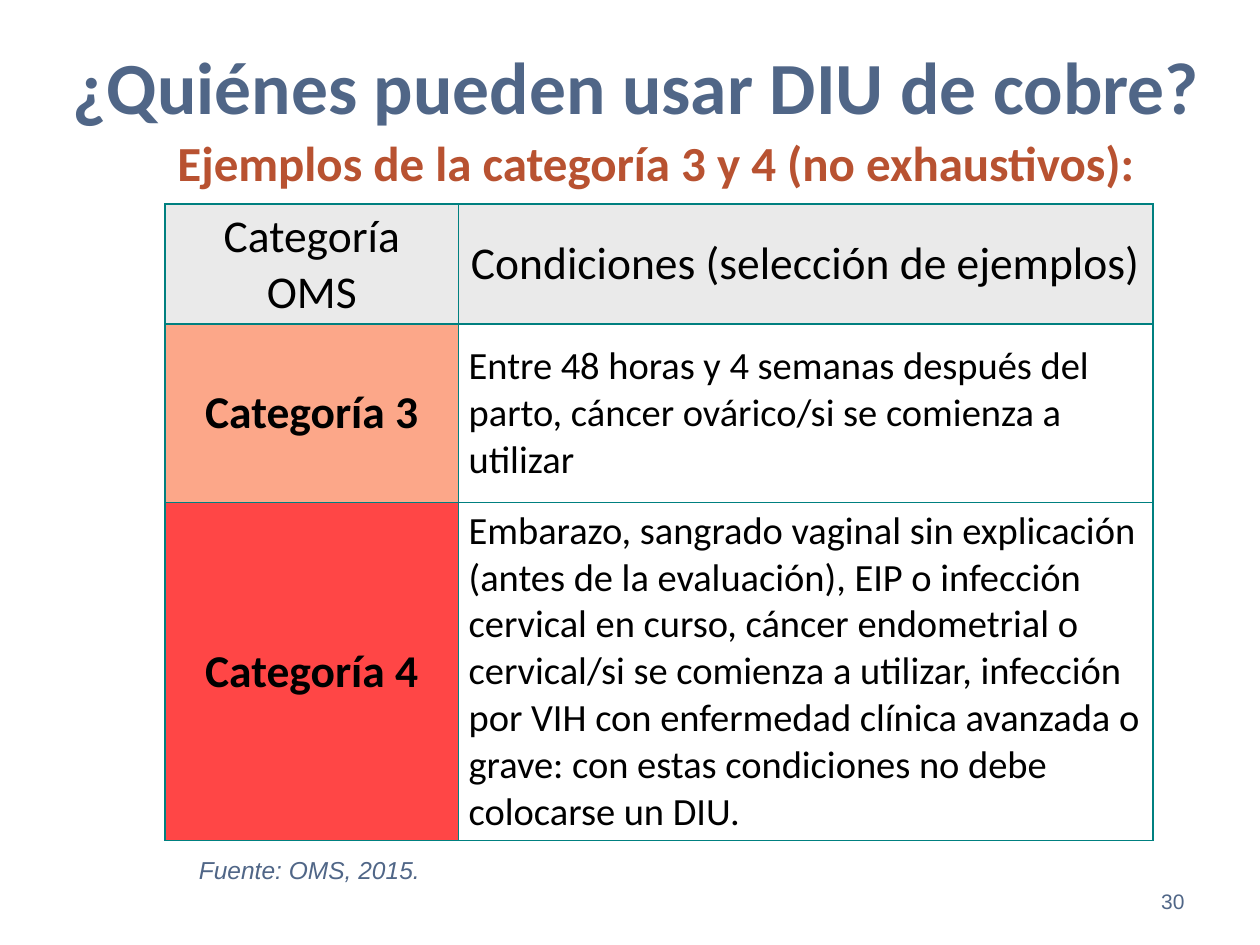
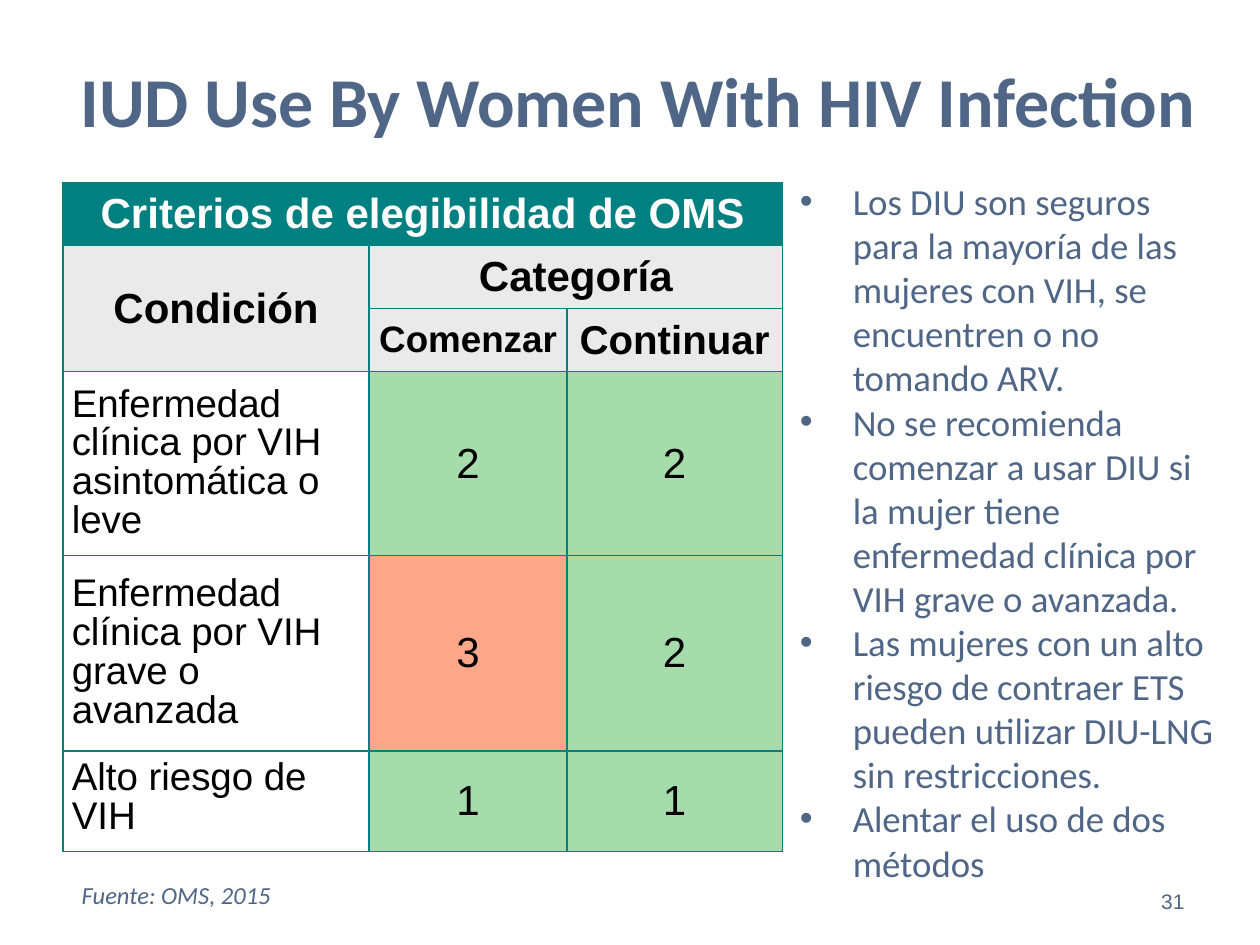
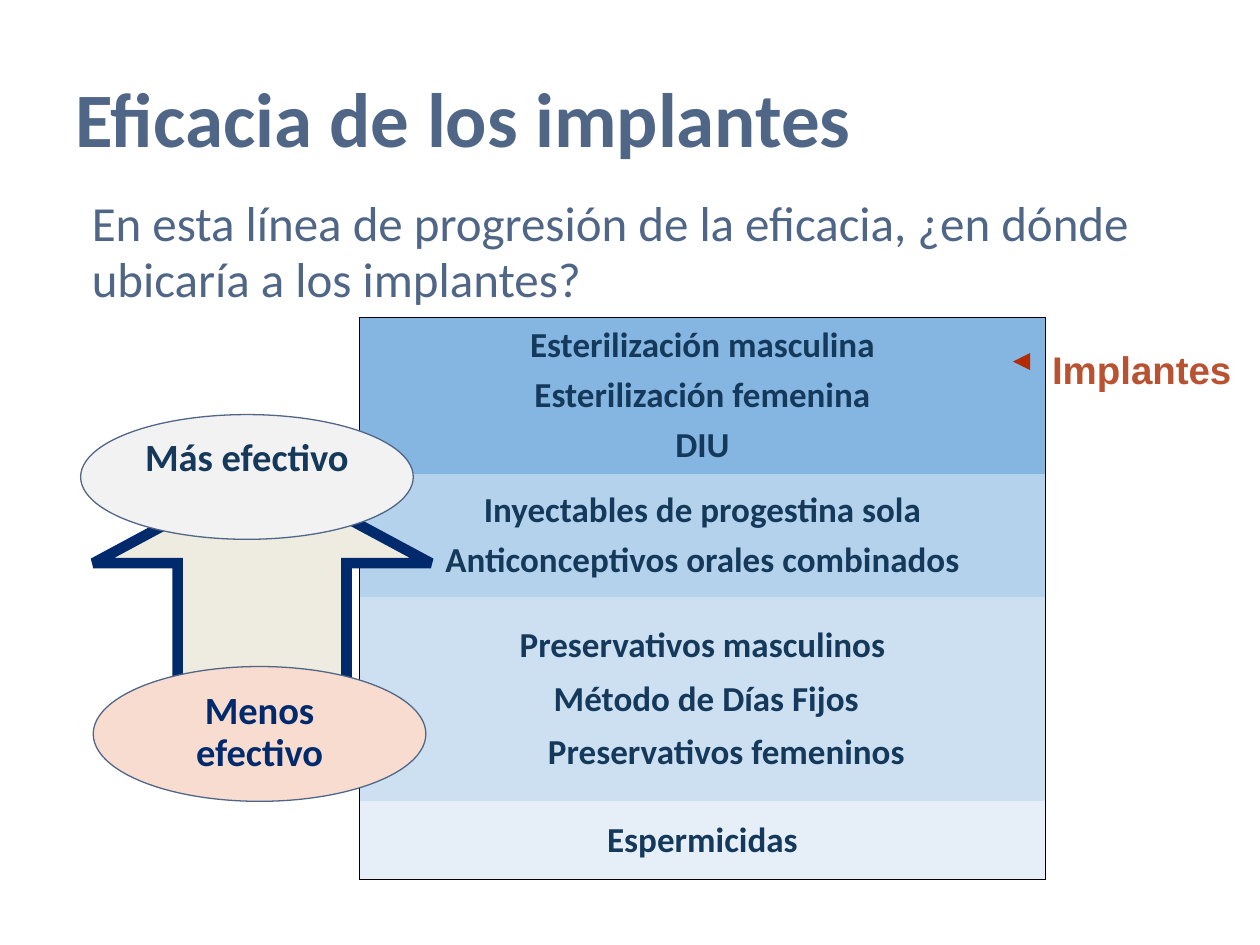
"""Build three slides on copper IUD eligibility and implant effectiveness."""

from dataclasses import dataclass
from typing import Any

import lxml.etree
import pptx
import pptx.dml.color
import pptx.enum.shapes
import pptx.enum.text
import pptx.oxml
import pptx.oxml.ns
import pptx.util

Inches = pptx.util.Inches
Pt = pptx.util.Pt
ALIGN = pptx.enum.text.PP_ALIGN
ANCHOR = pptx.enum.text.MSO_ANCHOR
SHAPE = pptx.enum.shapes.MSO_SHAPE
qn = pptx.oxml.ns.qn

COLORS = {
    "slate": "506687", "rust": "B85231", "teal": "008080", "black": "000000",
    "white": "FFFFFF", "header": "EAEAEA", "salmon": "FCA789", "red": "FF4646",
    "green": "A6DBAB", "ink": "15395B", "navy": "002A6C", "cream": "EEECE1",
    "pale": "F2F2F2", "peach": "F8DCD0", "marker": "B42B00",
    "blue_1": "85B5E1", "blue_2": "B5D2EC", "blue_3": "CDE0F2", "blue_4": "E6EFF8",
}
NO_STYLE_TABLE = "{2D5ABB26-0587-4C30-8999-92F81FD0307C}"
SIDES = {"left": "lnL", "right": "lnR", "top": "lnT", "bottom": "lnB"}
Insets = tuple[float, float, float, float]
BOX_INSETS = (0.1, 0.05, 0.1, 0.05)


@dataclass(frozen=True)
class Box:
    """Position and size in inches."""

    left: float
    top: float
    width: float
    height: float

    def emu(self) -> tuple[int, int, int, int]:
        """Return the four lengths for python-pptx."""
        return Inches(self.left), Inches(self.top), Inches(self.width), Inches(self.height)


@dataclass(frozen=True)
class CellSpec:
    """Text, fill and format of one table cell."""

    text: str
    format: dict[str, Any]
    fill: str | None = None
    insets: Insets = BOX_INSETS
    anchor: Any = ANCHOR.MIDDLE
    rows: int = 1
    columns: int = 1


@dataclass(frozen=True)
class Oval:
    """A labelled end of the effectiveness arrow."""

    box: Box
    text: str
    fill: str
    color: str


def rgb(name: str) -> pptx.dml.color.RGBColor:
    """Return a named colour."""
    return pptx.dml.color.RGBColor.from_string(COLORS[name])


def write(
    text_frame: Any, text: str, *, size: float, color: str, font: str = "Calibri",
    bold: bool = False, italic: bool = False, align: Any = ALIGN.LEFT,
    spacing: float = 1.0, gap: float = 0, bullet: str = "", indents: tuple[float, ...] = (),
) -> None:
    """Write one paragraph per line of text in a single format."""
    for index, line in enumerate(text.split("\n")):
        paragraph = text_frame.add_paragraph() if index else text_frame.paragraphs[0]
        paragraph.text = line
        paragraph.alignment = align
        paragraph.line_spacing = spacing
        if index and gap:
            paragraph.space_before = Pt(gap)
        properties = paragraph._p.get_or_add_pPr()
        if indents:
            properties.set("marL", str(Inches(indents[index])))
        if bullet:
            properties.set("marL", str(Inches(0.5)))
            properties.set("indent", str(Inches(-0.42)))
            lxml.etree.SubElement(properties, qn("a:buFont"), typeface="Arial")
            lxml.etree.SubElement(properties, qn("a:buChar"), char=bullet)
        for run in paragraph.runs:
            run.font.name = font
            run.font.size = Pt(size)
            run.font.bold = bold
            run.font.italic = italic
            run.font.color.rgb = rgb(color)


def fit(holder: Any, insets: Insets, anchor: Any) -> None:
    """Set the margins and anchor of a text frame or cell."""
    holder.margin_left, holder.margin_top, holder.margin_right, holder.margin_bottom = map(
        Inches, insets
    )
    holder.vertical_anchor = anchor


def add_text(
    slide: Any, box: Box, text: str, anchor: Any = ANCHOR.TOP,
    insets: Insets = BOX_INSETS, **text_format: Any,
) -> None:
    """Add a wrapped text box."""
    text_frame = slide.shapes.add_textbox(*box.emu()).text_frame
    text_frame.word_wrap = True
    fit(text_frame, insets, anchor)
    write(text_frame, text, **text_format)


def add_title(slide: Any, box: Box, text: str, size: float, align: Any = ALIGN.LEFT) -> None:
    """Add the slide title."""
    add_text(slide, box, text, ANCHOR.MIDDLE, size=size, color="slate", bold=True, align=align)


def add_source(slide: Any, box: Box, text: str, font: str, spacing: float) -> None:
    """Add the italic source line."""
    add_text(slide, box, text, size=14, color="slate", font=font, italic=True, spacing=spacing)


def add_number(slide: Any, number: int) -> None:
    """Add the slide number at the lower right."""
    add_text(slide, Box(7.17, 6.95, 2.33, 0.4), str(number), ANCHOR.MIDDLE,
             size=12, color="slate", font="Arial", align=ALIGN.RIGHT)


def set_borders(cell: Any, sides: list[str], color: str, width: float) -> None:
    """Draw the given sides of a cell."""
    properties = cell._tc.get_or_add_tcPr()
    for position, side in enumerate(side for side in SIDES if side in sides):
        line = pptx.oxml.parse_xml(
            f'<a:{SIDES[side]} xmlns:a="http://schemas.openxmlformats.org/drawingml/2006/main"'
            f' w="{Pt(width)}"><a:solidFill><a:srgbClr val="{COLORS[color]}"/></a:solidFill>'
            f"</a:{SIDES[side]}>"
        )
        properties.insert(position, line)


def add_table(
    slide: Any, left: float, top: float, widths: list[float], heights: list[float],
    cells: dict[tuple[int, int], CellSpec], border: str, border_width: float,
    inner_lines: bool = True,
) -> None:
    """Add a table with explicit fills and borders."""
    box = Box(left, top, sum(widths), sum(heights))
    table = slide.shapes.add_table(len(heights), len(widths), *box.emu()).table
    table._tbl.tblPr.find(qn("a:tableStyleId")).text = NO_STYLE_TABLE
    for column, width in zip(table.columns, widths):
        column.width = Inches(width)
    for row, height in zip(table.rows, heights):
        row.height = Inches(height)
    for (row, column), spec in cells.items():
        cell = table.cell(row, column)
        if spec.rows > 1 or spec.columns > 1:
            cell.merge(table.cell(row + spec.rows - 1, column + spec.columns - 1))
        fit(cell, spec.insets, spec.anchor)
        write(cell.text_frame, spec.text, **spec.format)
        if spec.fill:
            cell.fill.solid()
            cell.fill.fore_color.rgb = rgb(spec.fill)
    for row in range(len(heights)):
        sides = ["left", "right"]
        if inner_lines or row == 0:
            sides.append("top")
        if inner_lines or row == len(heights) - 1:
            sides.append("bottom")
        for column in range(len(widths)):
            set_borders(table.cell(row, column), sides, border, border_width)


def add_filled(slide: Any, kind: Any, box: Box, fill: str, line: str, width: float) -> Any:
    """Add a preset shape without shadow."""
    shape = slide.shapes.add_shape(kind, *box.emu())
    shape.shadow.inherit = False
    shape.fill.solid()
    shape.fill.fore_color.rgb = rgb(fill)
    shape.line.color.rgb = rgb(line)
    shape.line.width = Pt(width)
    return shape


def build_copper_slide(slide: Any) -> None:
    """Build the slide on categories 3 and 4 for copper IUDs."""
    add_title(slide, Box(0.3, 0.05, 9.5, 1.25), "¿Quiénes pueden usar DIU de cobre?", 42, ALIGN.CENTER)
    add_text(slide, Box(1.31, 0.92, 8.41, 0.77), "Ejemplos de la categoría 3 y 4 (no exhaustivos):",
             ANCHOR.MIDDLE, size=28, color="rust", bold=True, spacing=0.95)
    header = dict(size=26, color="black", align=ALIGN.CENTER)
    category = header | dict(bold=True)
    condition = dict(size=22, color="black")
    rows = [
        ("Categoría OMS", header, "header", "Condiciones (selección de ejemplos)", header, "header"),
        ("Categoría 3", category, "salmon",
         "Entre 48 horas y 4 semanas después del parto, cáncer ovárico/si se comienza a utilizar",
         condition, None),
        ("Categoría 4", category, "red",
         "Embarazo, sangrado vaginal sin explicación (antes de la evaluación), EIP o infección "
         "cervical en curso, cáncer endometrial o cervical/si se comienza a utilizar, infección "
         "por VIH con enfermedad clínica avanzada o grave: con estas condiciones no debe "
         "colocarse un DIU.", condition, None),
    ]
    insets = (0.08, 0.04, 0.08, 0.04)
    cells = {}
    for row, values in enumerate(rows):
        for column in range(2):
            cells[row, column] = CellSpec(*values[column * 3:column * 3 + 3], insets)
    add_table(slide, 1.31, 1.62, [2.33, 5.51], [0.95, 1.42, 2.68], cells, "teal", 1)
    add_source(slide, Box(1.48, 6.76, 2.1, 0.3), "Fuente: OMS, 2015.", "Arial", 0.9)
    add_number(slide, 30)


def build_hiv_slide(slide: Any) -> None:
    """Build the slide on IUD use with HIV."""
    add_title(slide, Box(0.54, 0.32, 9.19, 0.94), "IUD Use By Women With HIV Infection", 40)
    points = [
        "Los DIU son seguros para la mayoría de las mujeres con VIH, se encuentren o no tomando ARV.",
        "No se recomienda comenzar a usar DIU si la mujer tiene enfermedad clínica por VIH grave o avanzada.",
        "Las mujeres con un alto riesgo de contraer ETS pueden utilizar DIU-LNG sin restricciones.",
        "Alentar el uso de dos métodos",
    ]
    add_text(slide, Box(6.17, 1.37, 3.56, 5.97), "\n".join(points), size=21, color="slate", bullet="•")
    number = dict(size=24, color="black", font="Arial", align=ALIGN.CENTER)
    header = number | dict(bold=True)
    condition = dict(size=22, color="black", font="Arial", spacing=0.9)
    head_insets = (0.07, 0.04, 0.07, 0.04)
    body_insets = (0.07, 0.07, 0.07, 0.07)
    cells = {
        (0, 0): CellSpec("Criterios de elegibilidad de OMS", header | dict(color="white"), "teal",
                         head_insets, columns=3),
        (1, 0): CellSpec("Condición", header, "header", head_insets, rows=2),
        (1, 1): CellSpec("Categoría", header, "header", head_insets, columns=2),
        (2, 1): CellSpec("Comenzar", header | dict(size=21), "header", head_insets),
        (2, 2): CellSpec("Continuar", header | dict(size=23), "header", head_insets),
    }
    criteria = [
        ("Enfermedad clínica por VIH asintomática o leve", 2, 2, ANCHOR.MIDDLE),
        ("Enfermedad clínica por VIH grave o avanzada", 3, 2, ANCHOR.MIDDLE),
        ("Alto riesgo de VIH", 1, 1, ANCHOR.TOP),
    ]
    for row, (name, start, keep, anchor) in enumerate(criteria, start=3):
        cells[row, 0] = CellSpec(name, condition, None, body_insets, anchor)
        for column, value in enumerate((start, keep), start=1):
            fill = "salmon" if value >= 3 else "green"
            cells[row, column] = CellSpec(str(value), number, fill, body_insets)
    add_table(slide, 0.5, 1.45, [2.43, 1.57, 1.71], [0.5, 0.5, 0.5, 1.4, 1.55, 0.8], cells, "teal", 1)
    add_source(slide, Box(0.55, 6.98, 6.38, 0.28), "Fuente: OMS, 2015", "Calibri", 0.8)
    add_number(slide, 31)


def build_implant_slide(slide: Any) -> None:
    """Build the slide on implant effectiveness."""
    add_title(slide, Box(0.5, 0.3, 9, 1.25), "Eficacia de los implantes", 44)
    add_text(slide, Box(0.63, 1.51, 8.92, 0.99),
             "En esta línea de progresión de la eficacia, ¿en dónde ubicaría a los implantes?",
             size=28, color="slate", spacing=0.95)
    method = dict(size=20, color="ink", bold=True, align=ALIGN.CENTER, gap=4)
    tiers = [
        ("Esterilización masculina\nEsterilización femenina\nDIU", method),
        ("Inyectables de progestina sola\nAnticonceptivos orales combinados", method),
        ("Preservativos masculinos\nMétodo de Días Fijos\nPreservativos femeninos",
         method | dict(gap=6, indents=(0, 0.06, 0.38))),
        ("Espermicidas", method),
    ]
    cells = {(row, 0): CellSpec(text, text_format, f"blue_{row + 1}")
             for row, (text, text_format) in enumerate(tiers)}
    add_table(slide, 2.85, 2.52, [5.45], [1.24, 0.98, 1.62, 0.62], cells, "black", 0.75,
              inner_lines=False)

    arrow = add_filled(slide, SHAPE.RIGHT_ARROW, Box(1.08, 3.41, 2, 2.68), "cream", "navy", 6)
    arrow.rotation = 270
    arrow.adjustments[0] = 0.5
    arrow.adjustments[1] = 0.36
    lxml.etree.SubElement(arrow.line._get_or_add_ln(), qn("a:miter"), lim="800000")
    ovals = [
        Oval(Box(0.64, 3.29, 2.64, 0.99), "Más efectivo", "pale", "ink"),
        Oval(Box(0.74, 5.29, 2.64, 1.07), "Menos\vefectivo", "peach", "navy"),
    ]
    for oval in ovals:
        shape = add_filled(slide, SHAPE.OVAL, oval.box, oval.fill, "slate", 0.75)
        fit(shape.text_frame, (0.07, 0.04, 0.07, 0.04), ANCHOR.TOP)
        write(shape.text_frame, oval.text, size=22, color=oval.color, bold=True,
              align=ALIGN.CENTER, spacing=0.9)

    add_text(slide, Box(8.17, 2.7, 1.73, 0.47), "Implantes", insets=(0.18, 0.05, 0, 0.05),
             size=22, color="rust", font="Arial", bold=True)
    pointer = slide.shapes.add_connector(
        pptx.enum.shapes.MSO_CONNECTOR.STRAIGHT,
        Inches(8.17), Inches(2.87), Inches(8.04), Inches(2.87),
    )
    pointer.line.color.rgb = rgb("marker")
    pointer.line.width = Pt(3.25)
    lxml.etree.SubElement(pointer.line._get_or_add_ln(), qn("a:tailEnd"), type="triangle")
    lxml.etree.SubElement(pointer._element.spPr, qn("a:effectLst"))


def main() -> None:
    """Build and save the presentation."""
    presentation = pptx.Presentation()
    presentation.slide_width = Inches(10)
    presentation.slide_height = Inches(7.5)
    for build in (build_copper_slide, build_hiv_slide, build_implant_slide):
        build(presentation.slides.add_slide(presentation.slide_layouts[6]))
    presentation.save("out.pptx")


if __name__ == "__main__":
    main()
